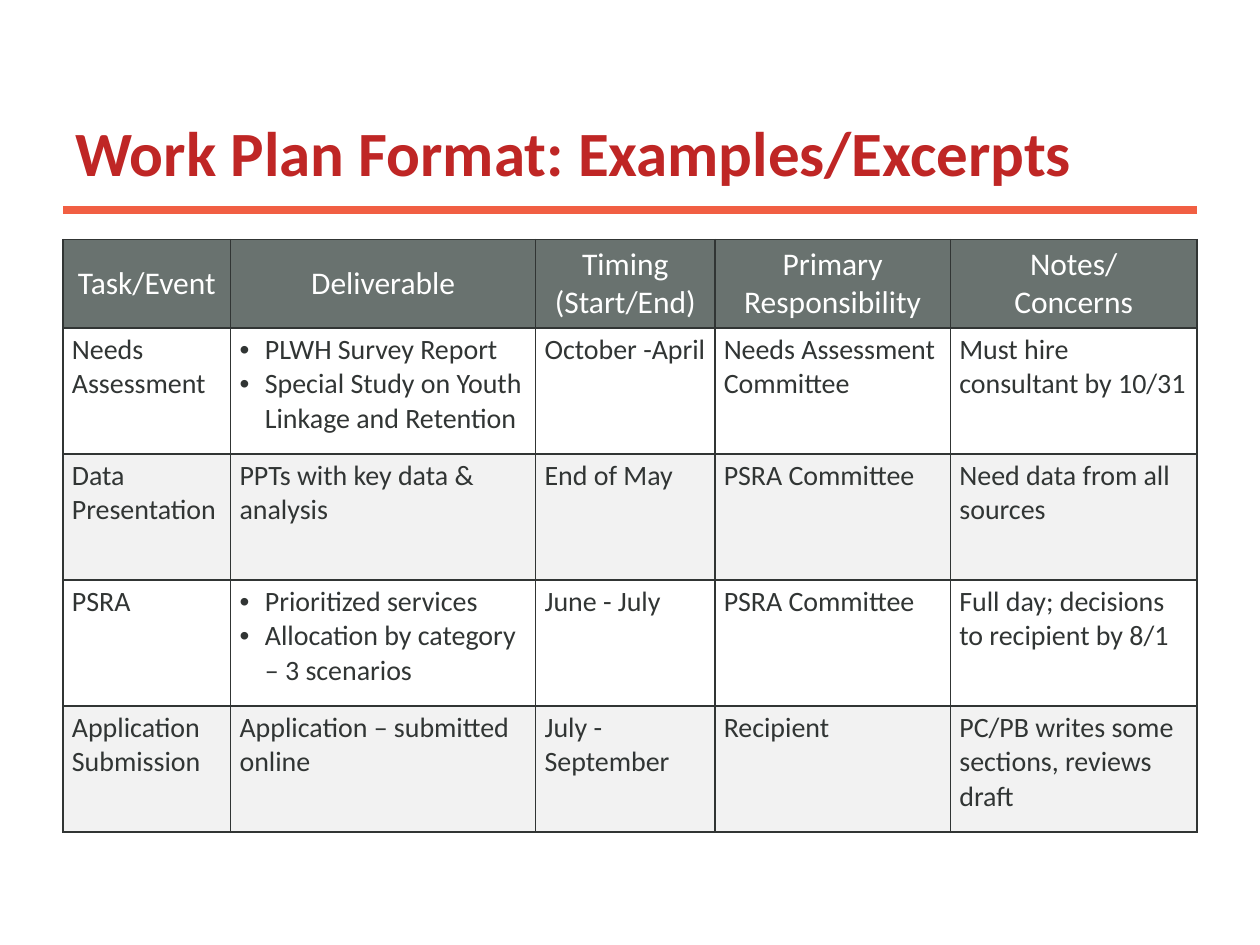
from lxml.etree import SubElement as Sub
from pptx import Presentation
from pptx.dml.color import RGBColor as Rgb
from pptx.enum.shapes import MSO_CONNECTOR as Link
from pptx.enum.text import MSO_ANCHOR as Anchor, PP_ALIGN as Align
from pptx.oxml.ns import qn
from pptx.util import Cm, Pt

TITLE = "Work Plan Format: Examples/Excerpts"
HEAD = ["Task/Event", "Deliverable", "Timing (Start/End)",
        "Primary\nResponsibility", "Notes/\nConcerns"]
ROWS = [
    ["Needs Assessment",
     ["PLWH Survey Report", "Special Study on Youth Linkage and Retention"],
     "October -April", "Needs Assessment Committee",
     "Must hire consultant by 10/31"],
    ["Data Presentation", "PPTs with key data & analysis", "End of May",
     "PSRA Committee", "Need data from all sources"],
    ["PSRA",
     ["Prioritized services", "Allocation by category – 3 scenarios"],
     "June - July", "PSRA Committee",
     "Full day; decisions to recipient by 8/1"],
    ["Application Submission", "Application – submitted online",
     "July -\nSeptember", "Recipient",
     "PC/PB writes some sections, reviews draft"],
]
COLORS = {"title": "BF2625", "rule": "F15F43", "head": "69726F",
          "ink": "313534", "odd": "FFFFFF", "even": "F2F2F2"}
FONT = "Calibri"
LEFT, WIDTH = 1.27, 22.86
TOP, RULE = 4.83, 4.24
COLS = [3.38, 6.15, 3.61, 4.75, 4.97]
HIGHS = [1.78] + [2.54] * len(ROWS)


def color(name):
    return Rgb.from_string(COLORS[name])


def style(para, size, name, bold=False):
    font = para.font
    font.name, font.size, font.bold = FONT, Pt(size), bold
    font.color.rgb = color(name)


def bullet(para):
    props = para._p.get_or_add_pPr()
    props.set("marL", str(Cm(0.51)))
    props.set("indent", str(-Cm(0.51)))
    Sub(props, qn("a:buFont"), typeface="Arial")
    Sub(props, qn("a:buChar"), char="•")


def border(cell):
    props = cell._tc.get_or_add_tcPr()
    for side in ("lnL", "lnR", "lnT", "lnB"):
        line = Sub(props, qn(f"a:{side}"), w=str(Pt(1)))
        fill = Sub(line, qn("a:solidFill"))
        Sub(fill, qn("a:srgbClr"), val=COLORS["ink"])


def write(cell, item, row):
    border(cell)
    cell.fill.solid()
    cell.fill.fore_color.rgb = color(
        "head" if row == 0 else "odd" if row % 2 else "even")
    cell.margin_left = cell.margin_right = Cm(0.18)
    cell.margin_top = cell.margin_bottom = Cm(0.1)
    cell.vertical_anchor = Anchor.TOP if row else Anchor.MIDDLE
    listed = isinstance(item, list)
    cell.text_frame.text = "\n".join(item) if listed else item
    for para in cell.text_frame.paragraphs:
        if listed:
            bullet(para)
        para.alignment = Align.LEFT if row else Align.CENTER
        style(para, 16 if row else 18, "ink" if row else "odd")


deck = Presentation()
deck.slide_width, deck.slide_height = Cm(25.4), Cm(19.05)
slide = deck.slides.add_slide(deck.slide_layouts[6])
shapes = slide.shapes

rule = shapes.add_connector(Link.STRAIGHT, Cm(LEFT), Cm(RULE),
                            Cm(LEFT + WIDTH), Cm(RULE))
rule.line.color.rgb = color("rule")
rule.line.width = Pt(4.5)
Sub(rule._element.spPr, qn("a:effectLst"))

frame = shapes.add_textbox(Cm(LEFT), Cm(0.76), Cm(WIDTH), Cm(3.18)).text_frame
frame.word_wrap = True
frame.vertical_anchor = Anchor.BOTTOM
frame.text = TITLE
style(frame.paragraphs[0], 36, "title", True)

table = shapes.add_table(len(HIGHS), len(COLS), Cm(LEFT), Cm(TOP),
                         Cm(WIDTH), Cm(sum(HIGHS))).table
for col, wide in zip(table.columns, COLS):
    col.width = Cm(wide)
for line, high in zip(table.rows, HIGHS):
    line.height = Cm(high)
for row, items in enumerate([HEAD] + ROWS):
    for col, item in enumerate(items):
        write(table.cell(row, col), item, row)
table.first_row = True
table.horz_banding = False

deck.save("out.pptx")
